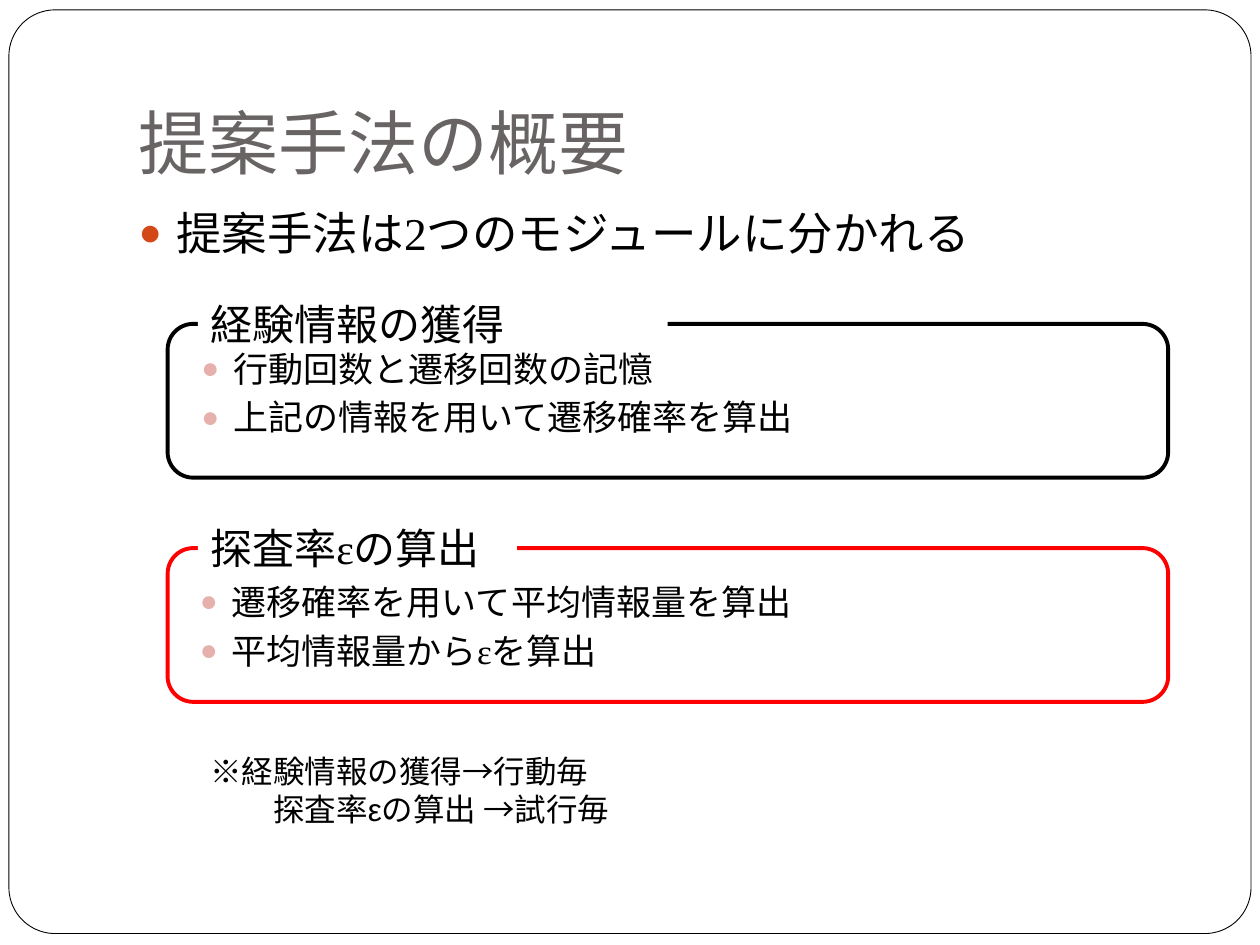
from dataclasses import dataclass

from lxml.etree import SubElement
from pptx import Presentation
from pptx.dml.color import RGBColor
from pptx.enum.shapes import MSO_SHAPE
from pptx.enum.text import MSO_ANCHOR, MSO_AUTO_SIZE, PP_ALIGN
from pptx.oxml.ns import qn
from pptx.util import Cm, Pt

BLACK = RGBColor(0x00, 0x00, 0x00)
WHITE = RGBColor(0xFF, 0xFF, 0xFF)
RED = RGBColor(0xFF, 0x00, 0x00)
GRAY = RGBColor(0x69, 0x64, 0x64)
ORANGE = RGBColor(0xD3, 0x48, 0x17)
PINK = RGBColor(0xE6, 0xB1, 0xAC)
SERIF = "Times New Roman"
SANS = "Arial"


@dataclass
class Module:
    heading: str
    heading_width: float
    items: list[str]
    top: float
    items_left: float
    items_top: float
    color: RGBColor


MODULES = [
    Module("経験情報の獲得", 9.47,
           ["行動回数と遷移回数の記憶", "上記の情報を用いて遷移確率を算出"],
           6.53, 2.16, 6.88, BLACK),
    Module("探査率εの算出", 6.43,
           ["遷移確率を用いて平均情報量を算出", "平均情報量からεを算出"],
           11.05, 2.13, 11.58, RED),
]


def add_run(p, text: str, size: float, font: str = SERIF, color: RGBColor = BLACK) -> None:
    r = p.add_run()
    r.text = text
    r.font.size = Pt(size)
    r.font.name = font
    r.font.color.rgb = color


def set_bullet(p, color: RGBColor, margin: float, hanging: float, before: float) -> None:
    p.alignment = PP_ALIGN.LEFT
    p.space_before = Pt(before)
    pPr = p._p.get_or_add_pPr()
    pPr.set("marL", str(Cm(margin)))
    pPr.set("indent", str(-Cm(hanging)))
    bu_clr = SubElement(pPr, qn("a:buClr"))
    SubElement(bu_clr, qn("a:srgbClr"), val=str(color))
    SubElement(pPr, qn("a:buSzPct"), val="85000")
    SubElement(pPr, qn("a:buFont"), typeface=SERIF)
    SubElement(pPr, qn("a:buChar"), char="●")


def place(sp, left: float, top: float, width: float, height: float) -> None:
    sp.left, sp.top, sp.width, sp.height = Cm(left), Cm(top), Cm(width), Cm(height)


def add_frame(s, left: float, top: float, width: float, height: float,
              color: RGBColor, weight: float):
    """Add an unfilled rounded rectangle."""
    sp = s.shapes.add_shape(MSO_SHAPE.ROUNDED_RECTANGLE,
                            Cm(left), Cm(top), Cm(width), Cm(height))
    sp.shadow.inherit = False
    sp.fill.background()
    sp.line.color.rgb = color
    sp.line.width = Pt(weight)
    return sp


def add_text_box(s, left: float, top: float, width: float, height: float):
    sp = s.shapes.add_textbox(Cm(left), Cm(top), Cm(width), Cm(height))
    sp.text_frame.word_wrap = True
    return sp


def add_module(s, module: Module) -> None:
    add_frame(s, 3.38, module.top, 20.17, 3.1, module.color, 2.25)

    heading = add_text_box(s, 3.99, module.top - 0.64, module.heading_width, 1.27)
    heading.fill.solid()
    heading.fill.fore_color.rgb = WHITE
    add_run(heading.text_frame.paragraphs[0], module.heading, 24)

    tf = add_text_box(s, module.items_left, module.items_top, 21.59, 2.3).text_frame
    for i, item in enumerate(module.items):
        p = tf.add_paragraph() if i else tf.paragraphs[0]
        set_bullet(p, PINK, 2.29, 0.64, 3.7)
        add_run(p, item, 20)


def main() -> None:
    prs = Presentation()
    prs.slide_width, prs.slide_height = Cm(25.4), Cm(19.05)
    s = prs.slides.add_slide(prs.slide_layouts[1])

    border = add_frame(s, 0.18, 0.2, 25.04, 18.62, BLACK, 0.5)
    border.adjustments[0] = 0.05
    border.fill.solid()
    border.fill.fore_color.rgb = WHITE
    s.shapes._spTree.insert(2, border._element)  # behind the placeholders

    title = s.shapes.title
    place(title, 2.54, 0.76, 21.59, 3.18)
    tf = title.text_frame
    tf.auto_size = MSO_AUTO_SIZE.NONE
    tf.vertical_anchor = MSO_ANCHOR.BOTTOM
    tf.margin_bottom = Cm(0.25)
    tf.paragraphs[0].alignment = PP_ALIGN.LEFT
    add_run(tf.paragraphs[0], "提案手法の概要", 40, color=GRAY)

    body = s.placeholders[1]
    place(body, 2.54, 4.01, 21.59, 12.7)
    tf = body.text_frame
    tf.auto_size = MSO_AUTO_SIZE.NONE
    set_bullet(tf.paragraphs[0], ORANGE, 0.76, 0.76, 5.8)
    add_run(tf.paragraphs[0], "提案手法は2つのモジュールに分かれる", 26)

    for module in MODULES:
        add_module(s, module)

    tf = add_text_box(s, 3.99, 15.04, 14.02, 1.8).text_frame
    add_run(tf.paragraphs[0], "※経験情報の獲得→行動毎", 18, SANS)
    add_run(tf.add_paragraph(), "  探査率εの算出 →試行毎", 18, SANS)

    p = tf.paragraphs[1]
    p.runs[0].text = "探査率εの算出 →試行毎"
    p._p.get_or_add_pPr().set("marL", str(Cm(1.27)))

    prs.save("out.pptx")


if __name__ == "__main__":
    main()
